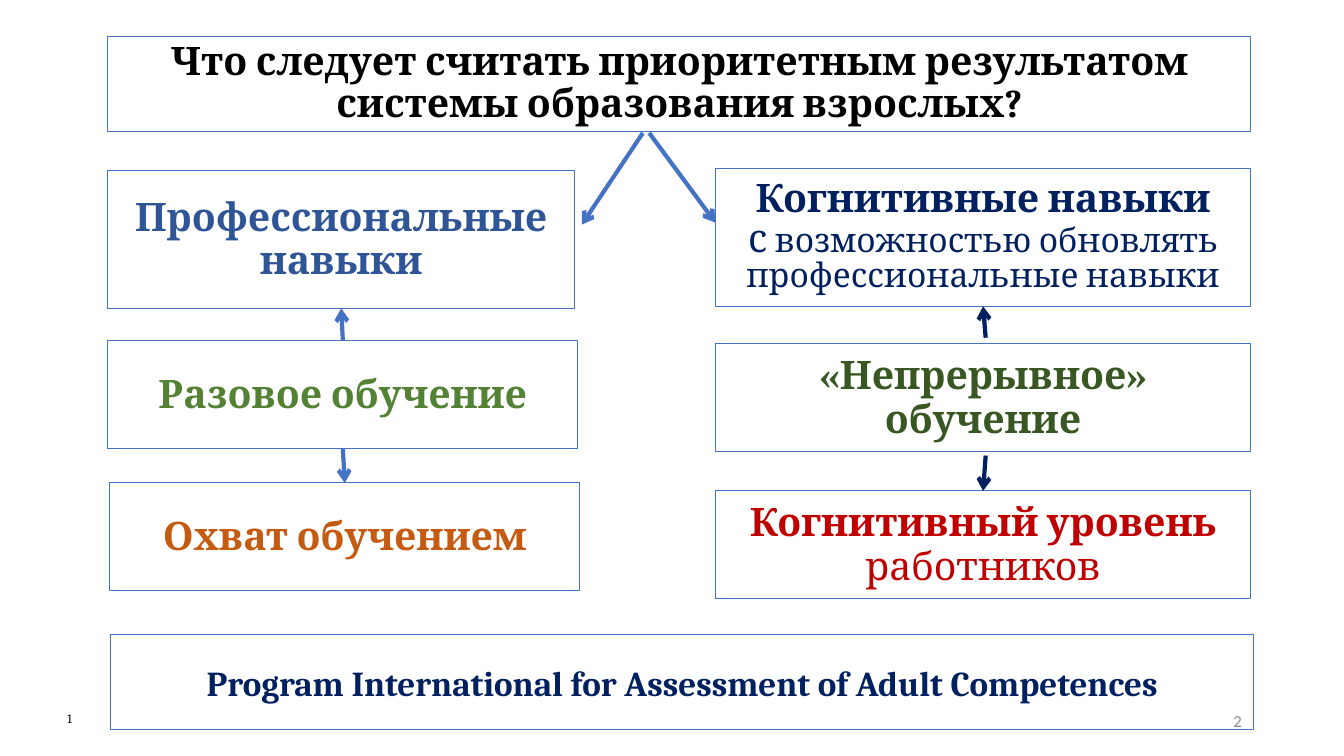
from dataclasses import dataclass

from lxml.etree import SubElement
from pptx import Presentation
from pptx.dml.color import RGBColor
from pptx.enum.shapes import MSO_CONNECTOR, MSO_SHAPE
from pptx.enum.text import MSO_ANCHOR as ANCHOR, MSO_AUTO_SIZE as FIT, PP_ALIGN as ALIGN
from pptx.oxml.ns import qn
from pptx.util import Cm, Pt


@dataclass(frozen=True)
class Theme:
    font: str = "Cambria"
    number_font: str = "Calibri"
    black: str = "000000"
    gray: str = "8C8C8C"
    blue: str = "4472C4"
    steel: str = "2F5597"
    navy: str = "002060"
    green: str = "548235"
    forest: str = "385723"
    orange: str = "C55A11"
    red: str = "C00000"
    heading: int = 28
    program: int = 25
    detail: int = 24
    number: int = 12
    mark: int = 9
    leading: int = 31


theme = Theme()


def fill_box(box, color, lines, spacing):
    box.fill.background()
    box.line.color.rgb = RGBColor.from_string(theme.blue)
    box.line.width = Pt(0.75)
    frame = box.text_frame
    frame.word_wrap = True
    frame.auto_size = FIT.NONE
    frame.vertical_anchor = ANCHOR.MIDDLE
    for index, pieces in enumerate(lines):
        paragraph = frame.add_paragraph() if index else frame.paragraphs[0]
        paragraph.alignment = ALIGN.CENTER
        paragraph.line_spacing = spacing
        paragraph.space_before = Pt(0)
        for words, size, bold in pieces:
            run = paragraph.add_run()
            run.text = words
            style(run.font, theme.font, size, color, bold)


def style(font, name, size, color, bold=False):
    font.name = name
    font.size = Pt(size)
    font.bold = bold
    font.color.rgb = RGBColor.from_string(color)


deck = Presentation()
deck.slide_width, deck.slide_height = Cm(33.87), Cm(19.05)
slide = deck.slides.add_slide(deck.slide_layouts[5])

question = slide.shapes.title
question.left, question.top, question.width, question.height = Cm(2.72), Cm(0.91), Cm(28.8), Cm(2.41)
fill_box(
    question,
    theme.black,
    [[("Что следует считать приоритетным результатом системы образования взрослых?", theme.heading, True)]],
    0.9,
)

leading = Pt(theme.leading)
statements = {
    "professional": (2.72, 4.29, 11.76, 3.48, theme.steel, leading,
                     [[("Профессиональные навыки", theme.heading, True)]]),
    "cognitive": (18.03, 4.24, 13.49, 3.48, theme.navy, 0.85,
                  [[("Когнитивные навыки", theme.heading, True)],
                   [("с", theme.heading, False),
                    (" возможностью обновлять профессиональные навыки", theme.detail, False)]]),
    "single": (2.72, 8.59, 11.84, 2.72, theme.green, leading,
               [[("Разовое обучение", theme.heading, True)]]),
    "continuous": (18.03, 8.66, 13.49, 2.72, theme.forest, leading,
                   [[("«Непрерывное» обучение", theme.heading, True)]]),
    "coverage": (2.77, 12.17, 11.84, 2.72, theme.orange, leading,
                 [[("Охват обучением", theme.heading, True)]]),
    "level": (18.03, 12.37, 13.49, 2.72, theme.red, leading,
              [[("Когнитивный уровень ", theme.heading, True), ("работников", theme.heading, False)]]),
    "program": (2.79, 15.98, 28.8, 2.41, theme.navy, leading,
                [[("Program International for Assessment of Adult Competences", theme.program, True)]]),
}
boxes = {}
for topic, (left, top, width, height, color, spacing, lines) in statements.items():
    box = slide.shapes.add_shape(MSO_SHAPE.RECTANGLE, Cm(left), Cm(top), Cm(width), Cm(height))
    box.shadow.inherit = False
    fill_box(box, color, lines, spacing)
    boxes[topic] = box

arrows = [
    ((16.2, 3.35), (14.66, 5.66), theme.blue, None, None),
    ((16.36, 3.35), (18.03, 5.61), theme.blue, None, None),
    ((8.64, 8.59), (8.61, 7.77), theme.blue, ("single", 0), ("professional", 2)),
    ((8.64, 11.31), (8.69, 12.17), theme.blue, ("single", 2), ("coverage", 0)),
    ((24.84, 8.51), (24.78, 7.72), theme.navy, None, ("cognitive", 2)),
    ((24.84, 11.48), (24.78, 12.37), theme.navy, None, ("level", 0)),
]
for start, end, color, source, target in arrows:
    arrow = slide.shapes.add_connector(MSO_CONNECTOR.STRAIGHT, *map(Cm, start + end))
    if source:
        arrow.begin_connect(boxes[source[0]], source[1])
    if target:
        arrow.end_connect(boxes[target[0]], target[1])
    arrow.line.color.rgb = RGBColor.from_string(color)
    arrow.line.width = Pt(3)
    SubElement(arrow.line._get_or_add_ln(), qn("a:tailEnd"), type="arrow")
    SubElement(arrow._element.spPr, qn("a:effectLst"))

numbers = [
    ("2", 23.93, 17.65, 7.62, 1.02, theme.number_font, theme.number, theme.gray, ALIGN.RIGHT, ANCHOR.MIDDLE),
    ("1", 1.45, 17.78, 0.8, 0.64, theme.font, theme.mark, theme.black, ALIGN.LEFT, ANCHOR.TOP),
]
for digit, left, top, width, height, font, size, color, align, anchor in numbers:
    label = slide.shapes.add_textbox(Cm(left), Cm(top), Cm(width), Cm(height)).text_frame
    label.text = digit
    label.word_wrap = True
    label.vertical_anchor = anchor
    label.paragraphs[0].alignment = align
    style(label.paragraphs[0].runs[0].font, font, size, color)

deck.save("out.pptx")
